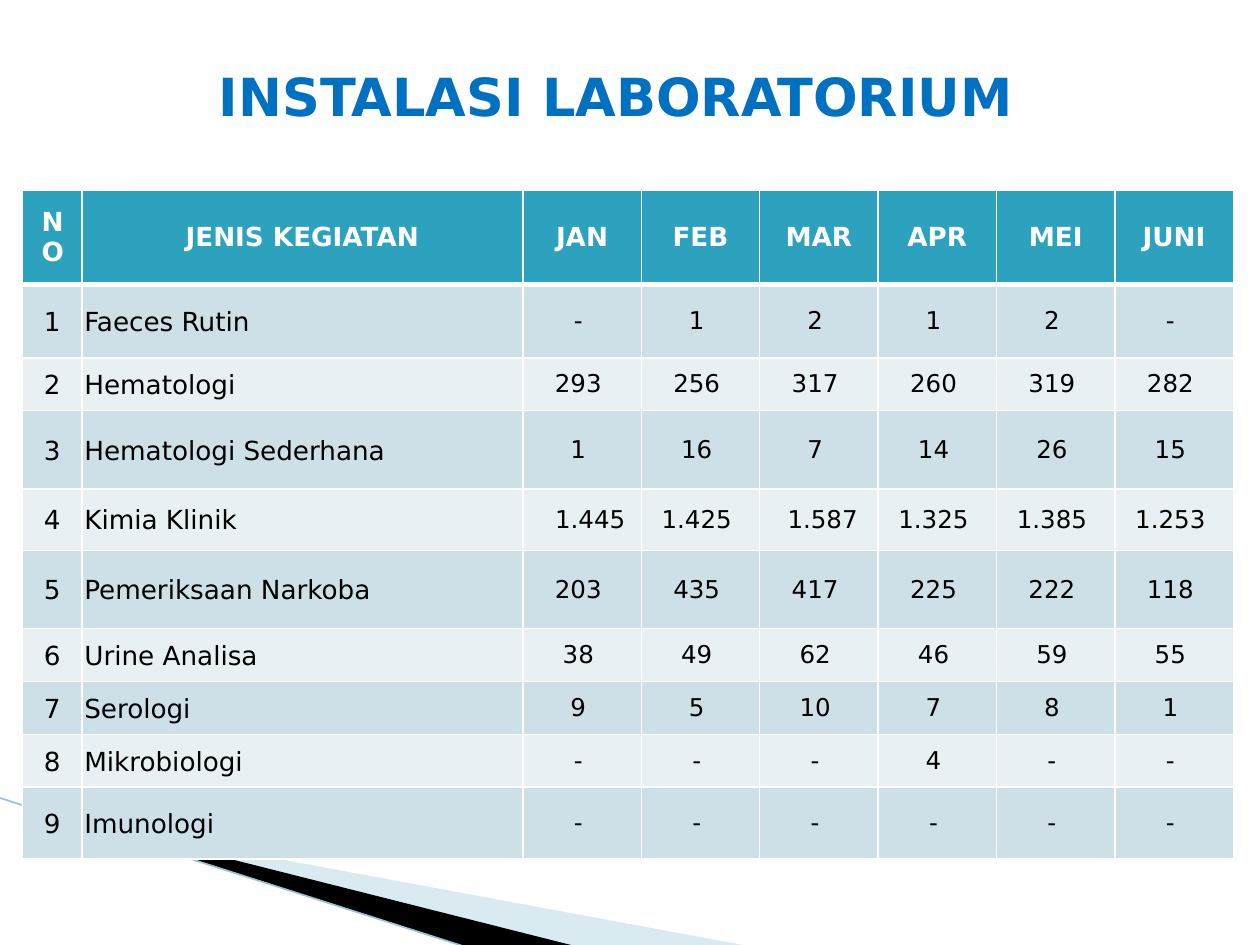
from lxml.etree import SubElement as Sub
from pptx import Presentation
from pptx.dml.color import RGBColor as RGB
from pptx.enum.shapes import MSO_CONNECTOR as Conn
from pptx.enum.text import MSO_ANCHOR as Anchor, PP_ALIGN as Align
from pptx.oxml.ns import qn
from pptx.util import Inches, Pt

FONT = "DejaVu Sans"
COLORS = {"title": "0070C0", "head": "2DA2BF", "odd": "CDE0E8", "even": "E8F0F4",
          "white": "FFFFFF", "black": "000000", "pale": "A0CBDC", "line": "97C5D8"}
COLS = [0.47, 3.5] + [0.94] * 6
ROWS = [0.75, 0.58, 0.42, 0.62, 0.49, 0.62, 0.42, 0.42, 0.42, 0.57]
HEADS = ["NO", "JENIS KEGIATAN", "JAN", "FEB", "MAR", "APR", "MEI", "JUNI"]
TESTS = [
    ("Faeces Rutin", "-", "1", "2", "1", "2", "-"),
    ("Hematologi", "293", "256", "317", "260", "319", "282"),
    ("Hematologi Sederhana", "1", "16", "7", "14", "26", "15"),
    ("Kimia Klinik", "1.445", "1.425", "1.587", "1.325", "1.385", "1.253"),
    ("Pemeriksaan Narkoba", "203", "435", "417", "225", "222", "118"),
    ("Urine Analisa", "38", "49", "62", "46", "59", "55"),
    ("Serologi", "9", "5", "10", "7", "8", "1"),
    ("Mikrobiologi", "-", "-", "-", "4", "-", "-"),
    ("Imunologi", "-", "-", "-", "-", "-", "-"),
]
HEAD_PAD = (0.15, 0.07, 0.15, 0.07)
NAME_PAD = (0.02, 0.02, 0.02, 0)
COUNT_PAD = (0, 0, 0.06, 0)
WIDE_PADS = {"1.445": (0.19, 0, 0.06, 0), "1.587": (0.12, 0, 0.06, 0)}


def color(name):
    """Return the named colour."""
    return RGB.from_string(COLORS[name])


def style(par, size, tint, bold=False, align=Align.CENTER):
    """Set the font and alignment of a paragraph."""
    par.alignment = align
    font = par.font
    font.name, font.size, font.bold = FONT, Pt(size), bold
    font.color.rgb = color(tint)


def add_wedge(slide, points, tint, alpha=None):
    """Draw a filled polygon, with opacity in percent if given."""
    first, *rest = [(Inches(x), Inches(y)) for x, y in points]
    build = slide.shapes.build_freeform(*first)
    build.add_line_segments(rest)
    wedge = build.convert_to_shape()
    wedge.shadow.inherit = False
    wedge.line.fill.background()
    wedge.fill.solid()
    wedge.fill.fore_color.rgb = color(tint)
    if alpha:
        tone = wedge.fill._xPr.find(qn("a:solidFill"))[0]
        Sub(tone, qn("a:alpha")).set("val", str(alpha * 1000))


def add_line(slide, start, end):
    """Draw a thin straight line."""
    line = slide.shapes.add_connector(Conn.STRAIGHT, *map(Inches, start + end))
    line.line.color.rgb = color("line")
    line.line.width = Pt(0.95)
    Sub(line._element.spPr, qn("a:effectLst"))


def set_edges(cell, top, bottom):
    """Give a cell white borders, ahead of its fill in the XML."""
    props = cell._tc.get_or_add_tcPr()
    widths = {"L": 1, "R": 1, "T": top, "B": bottom}
    for side, width in widths.items():
        edge = Sub(props, qn(f"a:ln{side}"))
        edge.set("w", str(Pt(width)))
        tone = Sub(Sub(edge, qn("a:solidFill")), qn("a:srgbClr"))
        tone.set("val", COLORS["white"])


def fill_cell(cell, text, row, col):
    """Write and style one table cell by its place in the grid."""
    head, count = row == 0, col > 1
    pad = HEAD_PAD if head else WIDE_PADS.get(text, COUNT_PAD) if count else NAME_PAD
    set_edges(cell, 3 if row == 1 else 1, 3 if head else 1)
    cell.fill.solid()
    cell.fill.fore_color.rgb = color("head" if head else "odd" if row % 2 else "even")
    cell.vertical_anchor = Anchor.MIDDLE
    (cell.margin_left, cell.margin_top,
     cell.margin_right, cell.margin_bottom) = map(Inches, pad)
    cell.text = text
    style(cell.text_frame.paragraphs[0], 14 if count and not head else 15,
          "white" if head else "black", head,
          Align.LEFT if col == 1 and not head else Align.CENTER)


def add_grid(slide):
    """Build the table of monthly test counts."""
    table = slide.shapes.add_table(
        len(ROWS), len(COLS), Inches(0.18), Inches(1.51),
        Inches(sum(COLS)), Inches(sum(ROWS))).table
    for col, width in zip(table.columns, COLS):
        col.width = Inches(width)
    for row, height in zip(table.rows, ROWS):
        row.height = Inches(height)
    data = [HEADS] + [(str(i), *test) for i, test in enumerate(TESTS, 1)]
    for r, texts in enumerate(data):
        for c, text in enumerate(texts):
            fill_cell(table.cell(r, c), text, r, c)


def add_title(slide, text):
    """Add the slide heading."""
    box = slide.shapes.add_textbox(Inches(0.34), Inches(0.35), Inches(9.1), Inches(0.82))
    frame = box.text_frame
    frame.word_wrap = True
    frame.vertical_anchor = Anchor.MIDDLE
    frame.text = text
    style(frame.paragraphs[0], 30, "title", True)


def main():
    """Build and save the slide."""
    deck = Presentation()
    deck.slide_width, deck.slide_height = Inches(10), Inches(7.5)
    slide = deck.slides.add_slide(deck.slide_layouts[6])
    add_wedge(slide, [(0.55, 6.51), (5.95, 7.51), (4.56, 7.51), (0.55, 6.5)], "pale", 40)
    add_wedge(slide, [(0.53, 6.49), (4.57, 7.51), (3.72, 7.52), (0.54, 6.5)], "black")
    add_line(slide, (-0.01, 6.33), (3.71, 7.52))
    add_grid(slide)
    add_title(slide, "INSTALASI LABORATORIUM")
    deck.save("out.pptx")


if __name__ == "__main__":
    main()
